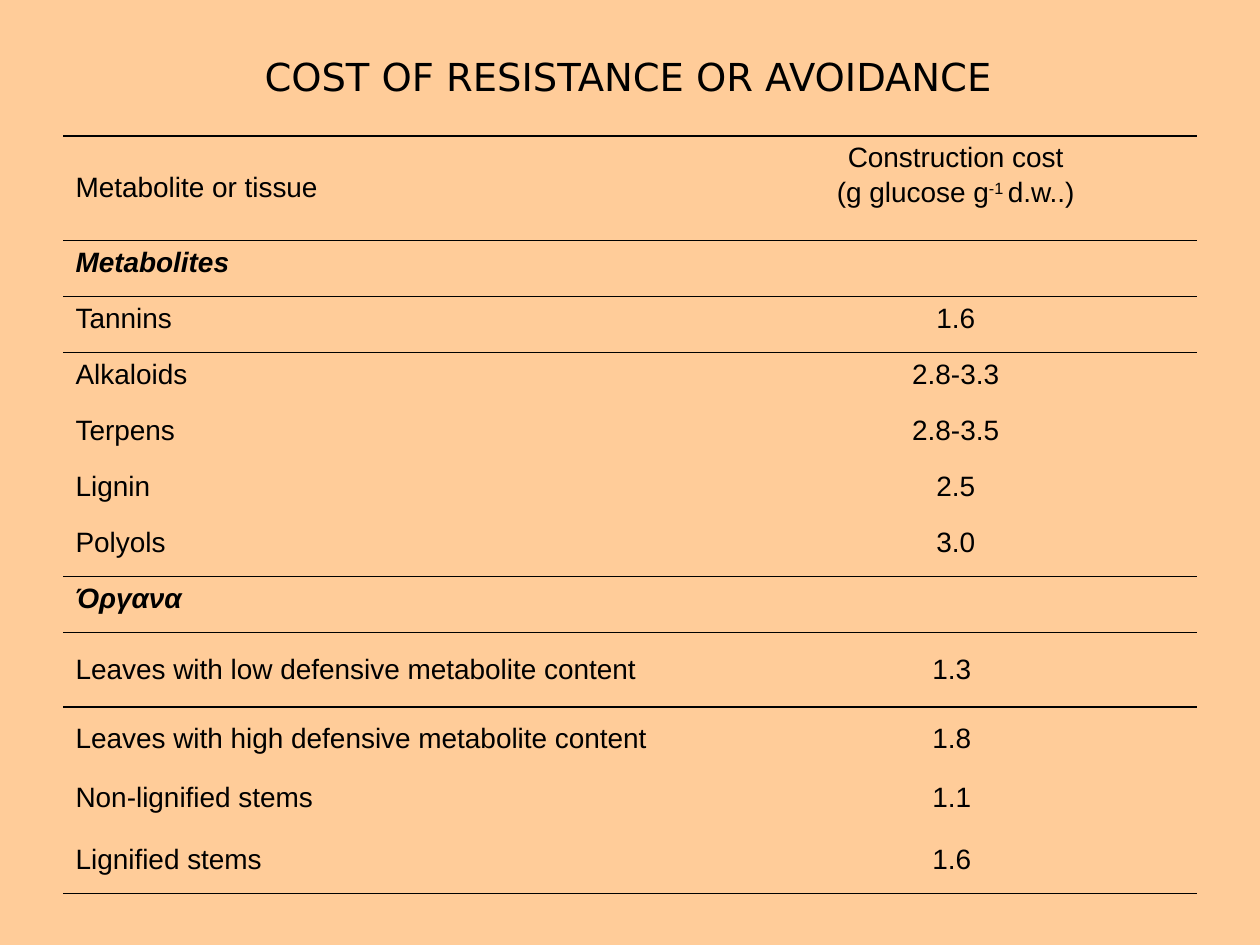
from lxml.etree import SubElement
from pptx import Presentation
from pptx.dml.color import RGBColor
from pptx.enum.text import MSO_ANCHOR as Anchor, PP_ALIGN as Align
from pptx.oxml.ns import qn
from pptx.util import Cm, Pt

BLACK = "000000"
PEACH = "FFCC99"
PLAIN_STYLE = "{2D5ABB26-0587-4C30-8999-92F81FD0307C}"
COLUMN_WIDTHS = [13.13, 9.73]
HEADINGS = ["Metabolites", "Όργανα"]
ROWS = [
    ("Metabolite or tissue", "", 2.11),
    ("Metabolites", "", 1.13),
    ("Tannins", "1.6", 1.13),
    ("Alkaloids", "2.8-3.3", 1.13),
    ("Terpens", "2.8-3.5", 1.13),
    ("Lignin", "2.5", 1.13),
    ("Polyols", "3.0", 1.13),
    ("Όργανα", "", 1.13),
    ("Leaves with low defensive metabolite content", "1.3 ", 1.5),
    ("Leaves with high defensive metabolite content", "1.8 ", 1.27),
    ("Non-lignified stems", "1.1 ", 1.12),
    ("Lignified stems", "1.6 ", 1.37),
]
RULED_ABOVE = {0, 1, 2, 7, 8, len(ROWS)}
FIRST_ORGAN = 8


def color(value):
    return RGBColor.from_string(value)


def add_run(para, text, size=16, font="Arial", heading=False):
    span = para.add_run()
    span.text = text
    span.font.size = Pt(size)
    span.font.name = font
    span.font.bold = span.font.italic = heading
    span.font.color.rgb = color(BLACK)
    return span


def add_title(page, text):
    box = page.shapes.add_textbox(Cm(4.75), Cm(0.94), Cm(15.82), Cm(1.19))
    box.text_frame.word_wrap = False
    para = box.text_frame.paragraphs[0]
    para.alignment = Align.CENTER
    add_run(para, text, 22, "DejaVu Sans")


def add_rule(cell, side):
    line = SubElement(cell._tc.get_or_add_tcPr(), qn(f"a:{side}"), w=str(Pt(1)))
    fill = SubElement(line, qn("a:solidFill"))
    SubElement(fill, qn("a:srgbClr"), val=BLACK)


def style_cell(cell, row):
    if row in RULED_ABOVE:
        add_rule(cell, "lnT")
    if row + 1 in RULED_ABOVE:
        add_rule(cell, "lnB")
    cell.fill.background()
    if row >= FIRST_ORGAN:
        cell.vertical_anchor = Anchor.MIDDLE


def fill_cost_header(cell):
    first = cell.text_frame.paragraphs[0]
    second = cell.text_frame.add_paragraph()
    for para in (first, second):
        para.alignment = Align.CENTER
        para.space_before = Pt(2.2)
    add_run(first, "Construction cost")
    add_run(second, "(g glucose g")
    exponent = add_run(second, "-1 ")
    exponent.font._element.set("baseline", "30000")
    add_run(second, "d.w..)")


def add_cost_table(page):
    frame = page.shapes.add_table(
        len(ROWS), 2, Cm(1.27), Cm(2.74), Cm(sum(COLUMN_WIDTHS)), Cm(15.24))
    table = frame.table
    table.first_row = table.horz_banding = False
    table._tbl.tblPr.find(qn("a:tableStyleId")).text = PLAIN_STYLE
    for column, width in zip(table.columns, COLUMN_WIDTHS):
        column.width = Cm(width)
    for row, (name, cost, height) in enumerate(ROWS):
        table.rows[row].height = Cm(height)
        for column, text in enumerate((name, cost)):
            cell = table.cell(row, column)
            style_cell(cell, row)
            if text:
                para = cell.text_frame.paragraphs[0]
                para.alignment = Align.CENTER if column else Align.LEFT
                para.space_before = Pt(2.2)
                add_run(para, text, heading=text in HEADINGS)
    table.cell(0, 0).vertical_anchor = Anchor.MIDDLE
    fill_cost_header(table.cell(0, 1))


def main():
    deck = Presentation()
    deck.slide_width, deck.slide_height = Cm(25.4), Cm(19.05)
    page = deck.slides.add_slide(deck.slide_layouts[6])
    page.background.fill.solid()
    page.background.fill.fore_color.rgb = color(PEACH)
    add_title(page, "COST OF RESISTANCE OR AVOIDANCE")
    add_cost_table(page)
    deck.save("out.pptx")


if __name__ == "__main__":
    main()
